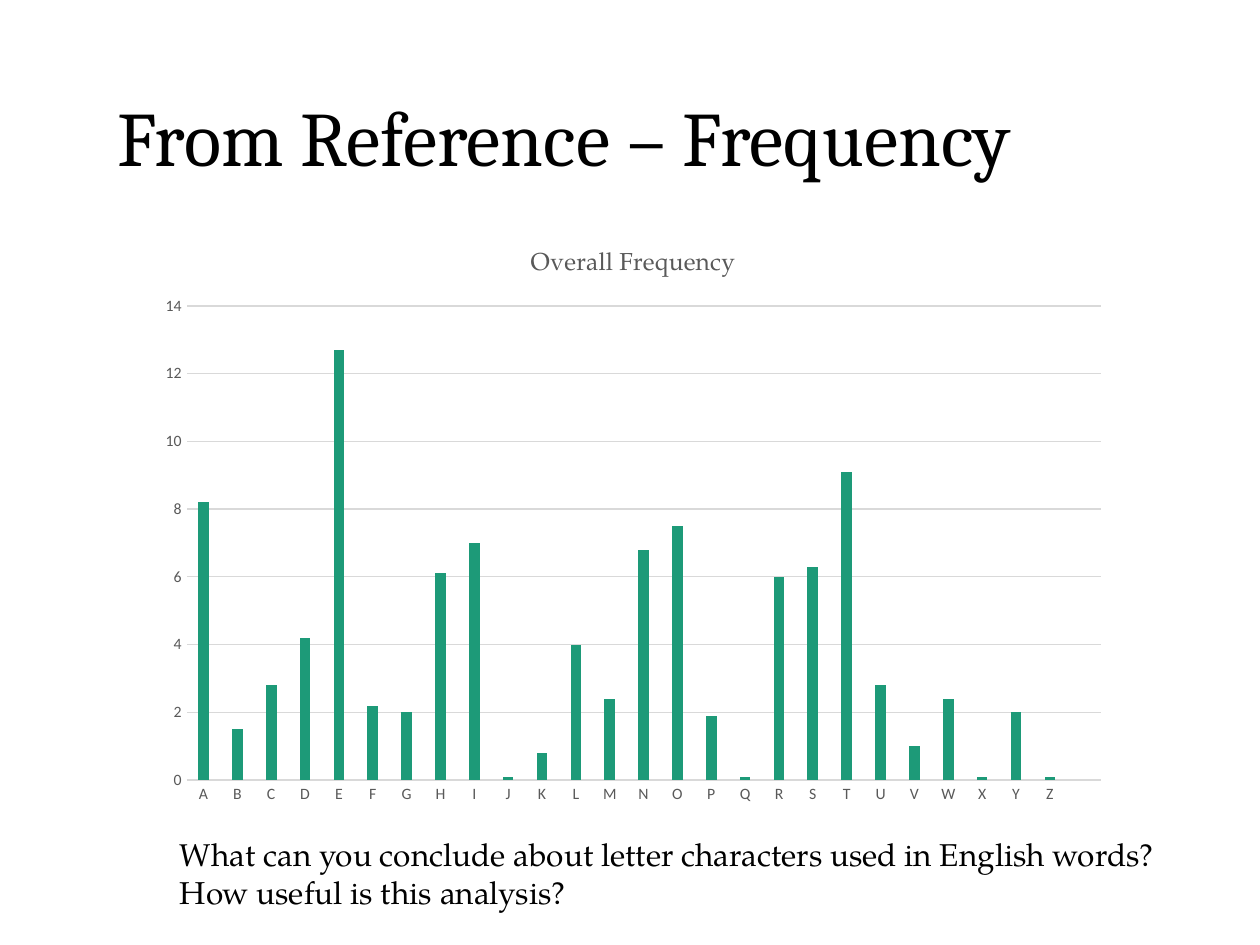
"""Build a slide with a column chart of English letter frequencies."""
from dataclasses import dataclass

from pptx import Presentation
from pptx.chart.data import CategoryChartData
from pptx.dml.color import RGBColor
from pptx.enum.chart import XL_CHART_TYPE, XL_TICK_MARK
from pptx.enum.text import MSO_ANCHOR, MSO_AUTO_SIZE, PP_ALIGN
from pptx.util import Inches, Pt

COLUMNS = XL_CHART_TYPE.COLUMN_CLUSTERED
NO_TICKS = XL_TICK_MARK.NONE
MIDDLE = MSO_ANCHOR.MIDDLE
NO_FIT = MSO_AUTO_SIZE.NONE
GROW = MSO_AUTO_SIZE.SHAPE_TO_FIT_TEXT
LEFT = PP_ALIGN.LEFT

TITLE = "From Reference – Frequency"
SERIES_NAME = "Overall Frequency"
LETTERS = [*"ABCDEFGHIJKLMNOPQRSTUVWXYZ", ""]
FREQUENCIES = [
    8.2, 1.5, 2.8, 4.2, 12.7, 2.2, 2, 6.1, 7, 0.1, 0.8, 4, 2.4, 6.8,
    7.5, 1.9, 0.1, 6, 6.3, 9.1, 2.8, 1, 2.4, 0.1, 2, 0.1, None,
]
QUESTIONS = [
    "What can you conclude about letter characters used in English words?",
    "How useful is this analysis?",
]
PLACES = {
    "title": (0.83, 0.4, 8.62, 1.45),
    "chart": (1.16, 1.8, 7.73, 4.67),
    "questions": (1.33, 6.58, 8.04, 0.71),
}


@dataclass(frozen=True)
class Theme:
    """Fonts, type sizes and colours of the slide."""
    heading_font: str = "Cambria"
    body_font: str = "TeX Gyre Pagella"
    chart_font: str = "Calibri"
    title_size: int = 44
    body_size: int = 18
    chart_title_size: int = 14
    chart_size: int = 10
    axis_size: int = 9
    text: str = "000000"
    muted: str = "595959"
    rule: str = "D9D9D9"
    bar: str = "1D9A78"


THEME = Theme()


def place(name):
    return [Inches(length) for length in PLACES[name]]


def style_font(font, name, size, color):
    font.name = name
    font.size = Pt(size)
    font.bold = False
    font.color.rgb = RGBColor.from_string(color)


def style_line(line):
    line.color.rgb = RGBColor.from_string(THEME.rule)
    line.width = Pt(0.75)


def add_title(slide):
    title = slide.shapes.title
    title.left, title.top, title.width, title.height = place("title")
    frame = title.text_frame
    frame.text = TITLE
    frame.auto_size = NO_FIT
    frame.vertical_anchor = MIDDLE
    paragraph = frame.paragraphs[0]
    paragraph.alignment = LEFT
    paragraph.line_spacing = 0.9
    style_font(paragraph.runs[0].font, THEME.heading_font, THEME.title_size, THEME.text)


def add_frequency_chart(slide):
    data = CategoryChartData()
    data.categories = LETTERS
    data.add_series(SERIES_NAME, FREQUENCIES)
    chart = slide.shapes.add_chart(COLUMNS, *place("chart"), data).chart
    style_font(chart.font, THEME.chart_font, THEME.chart_size, THEME.text)
    chart.has_legend = False
    chart.has_title = True
    chart_title = chart.chart_title
    chart_title.include_in_layout = False
    chart_title.text_frame.text = SERIES_NAME
    title_run = chart_title.text_frame.paragraphs[0].runs[0]
    style_font(title_run.font, THEME.body_font, THEME.chart_title_size, THEME.muted)

    for axis in (chart.category_axis, chart.value_axis):
        axis.major_tick_mark = NO_TICKS
        axis.minor_tick_mark = NO_TICKS
        style_font(axis.tick_labels.font, THEME.chart_font, THEME.axis_size, THEME.muted)
    style_line(chart.category_axis.format.line)
    value_axis = chart.value_axis
    value_axis.minimum_scale, value_axis.maximum_scale = 0, 14
    value_axis.major_unit = 2
    value_axis.format.line.fill.background()
    style_line(value_axis.major_gridlines.format.line)

    plot = chart.plots[0]
    plot.vary_by_categories = False
    plot.gap_width = 219
    plot.overlap = -27
    fill = plot.series[0].format.fill
    fill.solid()
    fill.fore_color.rgb = RGBColor.from_string(THEME.bar)


def add_questions(slide):
    frame = slide.shapes.add_textbox(*place("questions")).text_frame
    frame.text = "\n".join(QUESTIONS)
    frame.word_wrap = False
    frame.auto_size = GROW
    for paragraph in frame.paragraphs:
        style_font(paragraph.runs[0].font, THEME.body_font, THEME.body_size, THEME.text)


def main():
    presentation = Presentation()
    presentation.slide_width = Inches(10)
    presentation.slide_height = Inches(7.5)
    slide = presentation.slides.add_slide(presentation.slide_layouts.get_by_name("Title Only"))
    add_title(slide)
    add_frequency_chart(slide)
    add_questions(slide)
    presentation.save("out.pptx")


if __name__ == "__main__":
    main()
